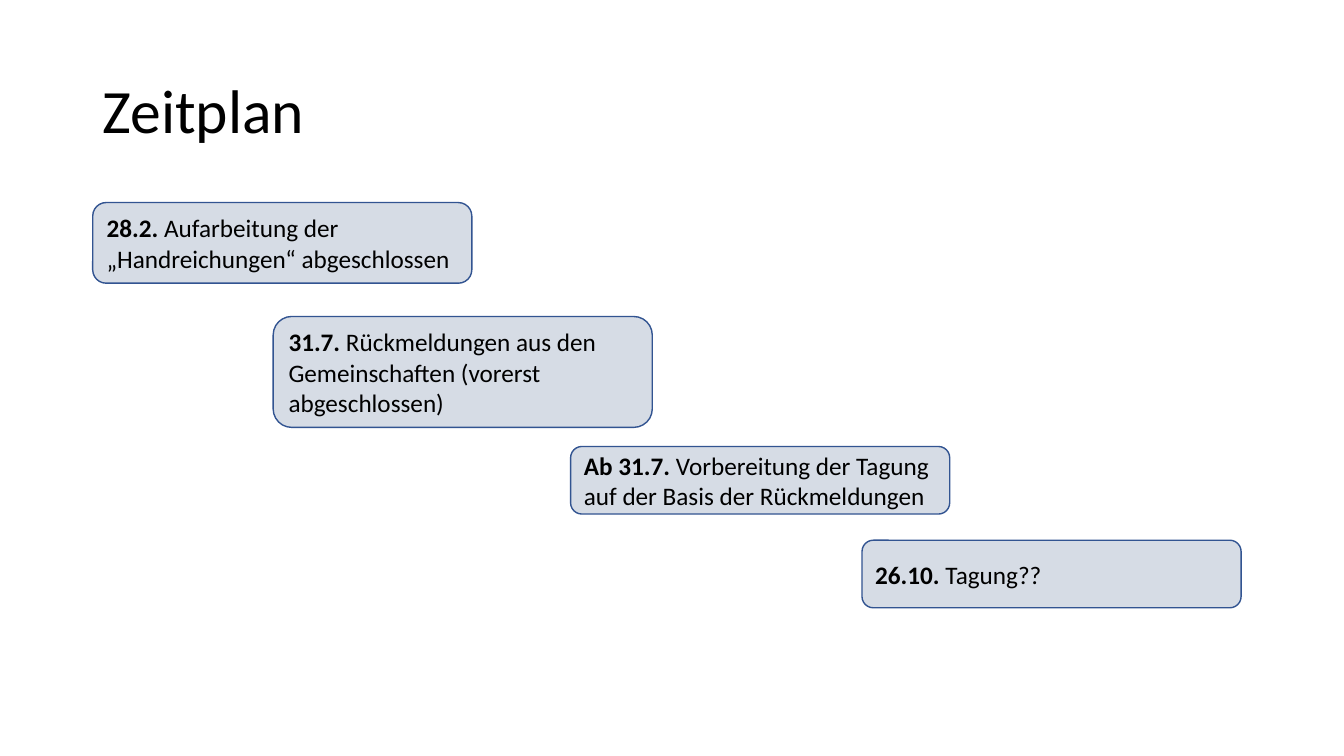
from pptx import Presentation
from pptx.dml.color import RGBColor
from pptx.enum.shapes import MSO_SHAPE as SHAPE
from pptx.enum.text import MSO_ANCHOR as ANCHOR, PP_ALIGN as ALIGN
from pptx.util import Inches, Pt

FONT = "Calibri"
BLACK, BOX_FILL, BOX_LINE = "000000", "D6DCE5", "325491"
BOX_WIDTH = 3.76

# left, top, height, date, task
MILESTONES = [
    (0.92, 2.01, 0.8, "28.2. ", "Aufarbeitung der „Handreichungen“ abgeschlossen"),
    (2.71, 3.14, 1.1, "31.7. ",
     "Rückmeldungen aus den Gemeinschaften (vorerst abgeschlossen)"),
    (5.66, 4.43, 0.67, "Ab 31.7. ",
     "Vorbereitung der Tagung auf der Basis der Rückmeldungen"),
    (8.55, 5.36, 0.67, "26.10. ", "Tagung??"),
]


def rgb(color):
    return RGBColor.from_string(color)


def style_text(sp, size):
    """Set wrapping, centred anchor and font; return the first paragraph."""
    tf = sp.text_frame
    tf.word_wrap = True
    tf.vertical_anchor = ANCHOR.MIDDLE
    p = tf.paragraphs[0]
    p.alignment = ALIGN.LEFT
    p.font.name = FONT
    p.font.size = Pt(size)
    p.font.color.rgb = rgb(BLACK)
    return p


def add_title(s, text):
    sp = s.shapes.add_textbox(Inches(0.92), Inches(0.4), Inches(11.5), Inches(1.45))
    p = style_text(sp, 44)
    p.line_spacing = 0.9
    p.add_run().text = text


def add_milestone(s, left, top, height, date, task):
    sp = s.shapes.add_shape(SHAPE.ROUNDED_RECTANGLE, Inches(left), Inches(top),
                            Inches(BOX_WIDTH), Inches(height))
    sp.shadow.inherit = False
    sp.fill.solid()
    sp.fill.fore_color.rgb = rgb(BOX_FILL)
    sp.line.color.rgb = rgb(BOX_LINE)
    sp.line.width = Pt(1)
    p = style_text(sp, 18)
    for text, bold in ((date, True), (task, False)):
        r = p.add_run()
        r.text = text
        r.font.bold = bold


def main():
    prs = Presentation()
    prs.slide_width, prs.slide_height = Inches(13.33), Inches(7.5)
    s = prs.slides.add_slide(prs.slide_layouts[6])
    add_title(s, "Zeitplan")
    for milestone in MILESTONES:
        add_milestone(s, *milestone)
    prs.save("out.pptx")


if __name__ == "__main__":
    main()
